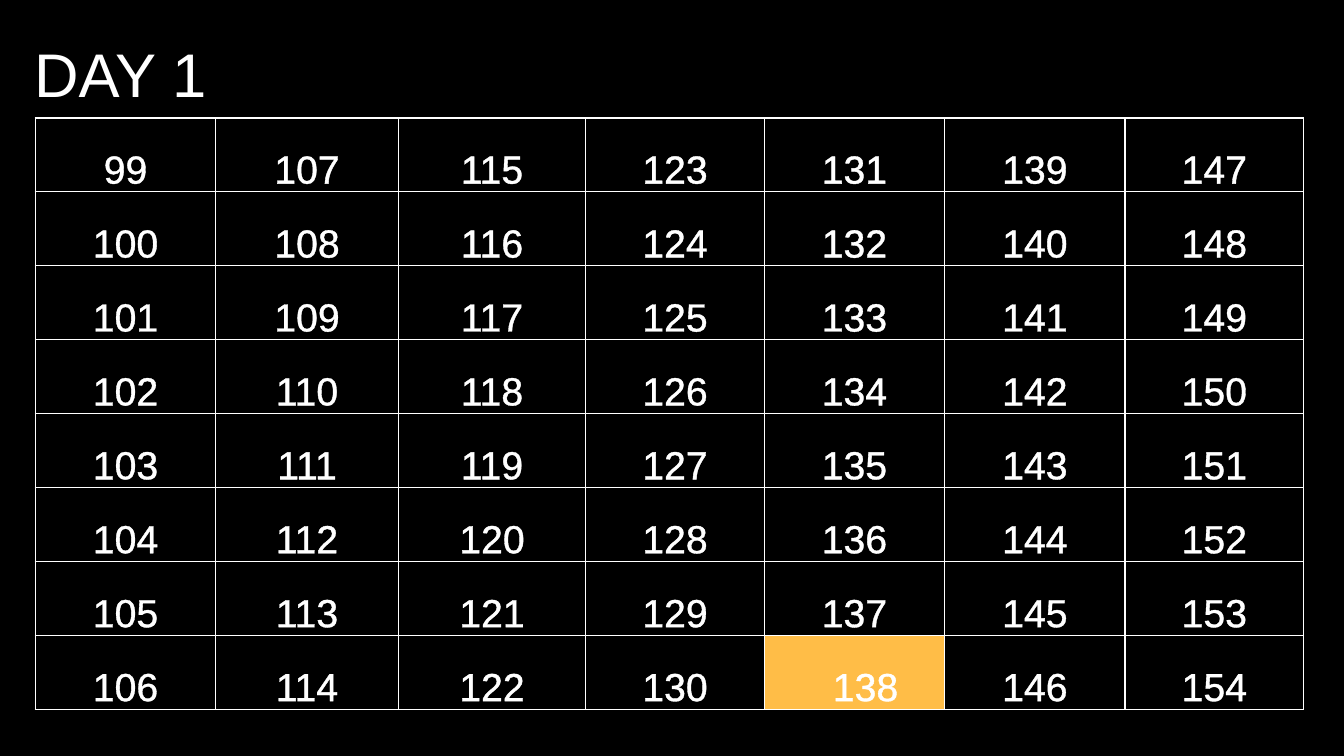
import dataclasses

import lxml.etree
import pptx
import pptx.dml.color
import pptx.enum.text
import pptx.oxml.ns
import pptx.util

Inches = pptx.util.Inches
Pt = pptx.util.Pt
Align = pptx.enum.text.PP_ALIGN
Anchor = pptx.enum.text.MSO_ANCHOR
qn = pptx.oxml.ns.qn


@dataclasses.dataclass(frozen=True)
class Theme:
    font: str = "Arial"
    back: str = "000000"
    ink: str = "FFFFFF"
    mark: str = "FFBD47"
    title: float = 44
    body: float = 28
    rule: float = 1
    edge: float = 0.75


@dataclasses.dataclass(frozen=True)
class Grid:
    left: float
    top: float
    height: float
    cols: tuple[float, ...]
    rows: int
    first: int
    marked: int


THEME = Theme()
GRID = Grid(0.35, 1.17, 5.87, (1.79, 1.81, 1.86, 1.77, 1.79, 1.79, 1.77),
            rows=8, first=99, marked=138)


def color(code: str) -> pptx.dml.color.RGBColor:
    return pptx.dml.color.RGBColor.from_string(code)


def add_line(parent, tag: str, width: float, place: int):
    """Put a solid line, in the ink colour, into an XML parent."""
    line = lxml.etree.Element(qn(tag), w=str(Pt(width)))
    fill = lxml.etree.SubElement(line, qn("a:solidFill"))
    lxml.etree.SubElement(fill, qn("a:srgbClr"), val=THEME.ink)
    parent.insert(place, line)


def write(frame, text: str, *, size: float, align=Align.LEFT,
          space: float = 1, after: float = 0, edge: float = 0) -> None:
    para = frame.paragraphs[0]
    para.alignment = align
    para.line_spacing = space
    para.space_after = Pt(after)
    run = para.add_run()
    run.text = text
    run.font.name = THEME.font
    run.font.size = Pt(size)
    run.font.bold = False
    run.font.color.rgb = color(THEME.ink)
    if edge:
        add_line(run.font._element, "a:ln", edge, 0)


def draw_title(slide, text: str) -> None:
    box = slide.shapes.add_textbox(Inches(0.24), 0, Inches(11.5), Inches(1.45))
    frame = box.text_frame
    frame.word_wrap = True
    frame.vertical_anchor = Anchor.MIDDLE
    write(frame, text, size=THEME.title)


def draw_cell(cell, value: int, marked: bool) -> None:
    cell.vertical_anchor = Anchor.BOTTOM
    cell.margin_top = cell.margin_right = Inches(0.01)
    cell.margin_bottom = 0
    # The marked number sits a little right of centre
    cell.margin_left = Inches(0.23 if marked else 0.01)
    if marked:
        cell.fill.solid()
        cell.fill.fore_color.rgb = color(THEME.mark)
    else:
        cell.fill.background()
    for place, side in enumerate(("a:lnL", "a:lnR", "a:lnT", "a:lnB")):
        add_line(cell._tc.get_or_add_tcPr(), side, THEME.rule, place)
    write(cell.text_frame, str(value), size=THEME.body, align=Align.CENTER,
          space=1.19, after=14, edge=THEME.edge)


def draw_grid(slide, grid: Grid) -> None:
    table = slide.shapes.add_table(
        grid.rows, len(grid.cols), Inches(grid.left), Inches(grid.top),
        Inches(sum(grid.cols)), Inches(grid.height)).table
    table.first_row = table.horz_banding = False
    for col, width in enumerate(grid.cols):
        table.columns[col].width = Inches(width)
        # Numbers run down each column
        for row in range(grid.rows):
            value = grid.first + col * grid.rows + row
            draw_cell(table.cell(row, col), value, value == grid.marked)


def main() -> None:
    deck = pptx.Presentation()
    deck.slide_width = Inches(13.33)
    deck.slide_height = Inches(7.5)
    slide = deck.slides.add_slide(deck.slide_layouts[6])

    # Black backdrop
    slide.background.fill.solid()
    slide.background.fill.fore_color.rgb = color(THEME.back)

    # Heading and number grid
    draw_title(slide, "DAY 1")
    draw_grid(slide, GRID)
    deck.save("out.pptx")


if __name__ == "__main__":
    main()
